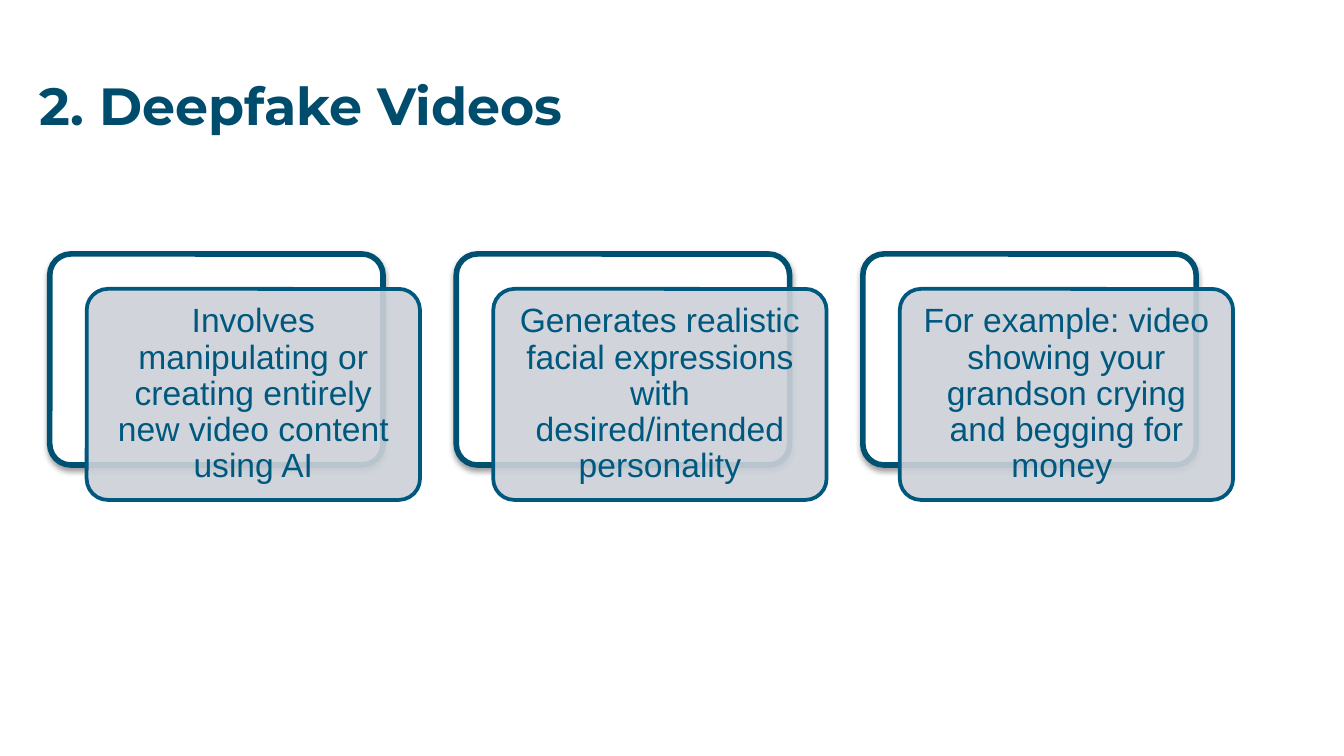
import dataclasses
import typing

import lxml.etree
import pptx
import pptx.dml.color
import pptx.enum.shapes
import pptx.enum.text
import pptx.oxml.ns
import pptx.util

SCALE = 4572  # EMU per px, 200 px to the inch
Align = pptx.enum.text.PP_ALIGN
Anchor = pptx.enum.text.MSO_ANCHOR


@dataclasses.dataclass(frozen=True)
class Theme:
    title: str = "004C6C"
    edge: str = "005072"
    ink: str = "00587E"
    back: str = "FFFFFF"
    front: str = "CCD1D8"
    shade: str = "000000"
    head: str = "Montserrat"
    body: str = "Arial"
    big: int = 28
    small: int = 18


@dataclasses.dataclass(frozen=True)
class Box:
    left: int
    top: int
    width: int
    height: int

    def move(self, right: int, down: int) -> "Box":
        return dataclasses.replace(self, left=self.left + right, top=self.top + down)


THEME = Theme()
TITLE = Box(39, 23, 1730, 190)
FIRST = Box(74, 378, 496, 314)
PITCH = 605
SHIFT = (55, 52)
INSET = 14
CARDS = (
    "Involves manipulating or creating entirely new video content using AI",
    "Generates realistic facial expressions with desired/intended personality",
    "For example: video showing your grandson crying and begging for money ",
)


def px(size: int) -> pptx.util.Emu:
    return pptx.util.Emu(size * SCALE)


def rgb(code: str) -> pptx.dml.color.RGBColor:
    return pptx.dml.color.RGBColor.from_string(code)


def apply(item: typing.Any, values: dict[str, typing.Any]) -> None:
    for name, value in values.items():
        setattr(item, name, value)


def place(box: Box) -> dict[str, pptx.util.Emu]:
    return {name: px(size) for name, size in dataclasses.asdict(box).items()}


def add(root: typing.Any, tag: str, **values: str) -> typing.Any:
    return lxml.etree.SubElement(root, pptx.oxml.ns.qn(tag), values)


def write(shape: typing.Any, text: str, frame: dict, para: dict, font: dict, ink: str) -> None:
    body = shape.text_frame
    body.text = text
    apply(body, {"word_wrap": True, "auto_size": pptx.enum.text.MSO_AUTO_SIZE.NONE, **frame})
    line = body.paragraphs[0]
    apply(line, {"line_spacing": 0.9, **para})
    run = line.runs[0]
    apply(run.font, font)
    run.font.color.rgb = rgb(ink)


def panel(slide: typing.Any, box: Box, fill: str, edge: str, weight: int) -> typing.Any:
    kind = pptx.enum.shapes.MSO_SHAPE.ROUNDED_RECTANGLE
    shape = slide.shapes.add_shape(kind, **place(box))
    shape.adjustments[0] = 0.1
    shape.shadow.inherit = False
    shape.fill.solid()
    shape.fill.fore_color.rgb = rgb(fill)
    shape.line.color.rgb = rgb(edge)
    shape.line.width = pptx.util.Pt(weight)
    return shape


def shade(shape: typing.Any) -> None:
    effects = shape.element.spPr.find(pptx.oxml.ns.qn("a:effectLst"))
    outer = add(effects, "a:outerShdw", blurRad=str(pptx.util.Pt(3.1)),
                dist=str(pptx.util.Pt(1.6)), dir="5400000", rotWithShape="0")
    add(add(outer, "a:srgbClr", val=THEME.shade), "a:alpha", val="38000")


def fade(shape: typing.Any, percent: int) -> None:
    color = shape.element.spPr.find(pptx.oxml.ns.qn("a:solidFill"))[0]
    add(color, "a:alpha", val=str(percent * 1000))


def card(slide: typing.Any, box: Box, text: str) -> None:
    # Empty panel behind
    shade(panel(slide, box, THEME.back, THEME.edge, 3))

    # Translucent panel with the text
    front = panel(slide, box.move(*SHIFT), THEME.front, THEME.ink, 2)
    fade(front, 90)
    frame = {f"margin_{side}": px(INSET) for side in ("left", "top", "right", "bottom")}
    write(front, text, {"vertical_anchor": Anchor.MIDDLE, **frame},
          {"alignment": Align.CENTER},
          {"name": THEME.body, "size": pptx.util.Pt(THEME.small)}, THEME.ink)


def main() -> None:
    deck = pptx.Presentation()
    apply(deck, {"slide_width": px(2000), "slide_height": px(1125)})
    slide = deck.slides.add_slide(deck.slide_layouts[5])

    # Title
    title = slide.shapes.title
    apply(title, place(TITLE))
    write(title, "2. Deepfake Videos", {"vertical_anchor": Anchor.BOTTOM},
          {"alignment": Align.LEFT},
          {"name": THEME.head, "size": pptx.util.Pt(THEME.big), "bold": True}, THEME.title)

    # Row of cards
    for index, text in enumerate(CARDS):
        card(slide, FIRST.move(index * PITCH, 0), text)

    deck.save("out.pptx")


if __name__ == "__main__":
    main()
